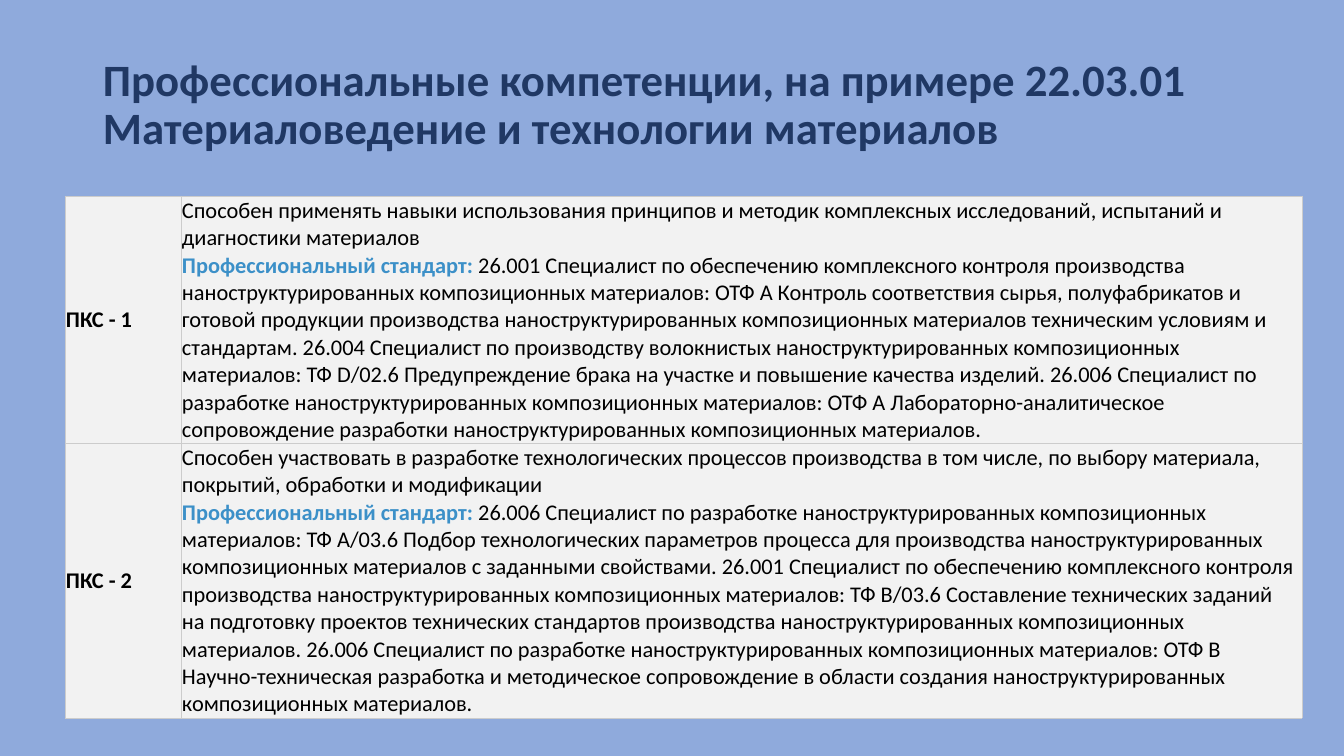
import pptx
import pptx.util
import pptx.dml.color
import pptx.enum.text
import pptx.oxml
import pptx.oxml.ns

EMU_PER_PX = 914400 / 100.8
FONT = "Calibri"
COLORS = {
    "background": "8FAADC",
    "title": "203864",
    "text": "000000",
    "standard": "3C90C8",
    "cell": "F2F2F2",
    "border": "CCCCCC",
}
TITLE = "Профессиональные компетенции, на примере 22.03.01  Материаловедение и технологии материалов"
STANDARD_LABEL = "Профессиональный стандарт: "
COMPETENCIES = [
    (
        "ПКС - 1",
        "Способен применять навыки использования принципов и методик комплексных исследований, "
        "испытаний и диагностики материалов",
        "26.001 Специалист по обеспечению комплексного контроля производства "
        "наноструктурированных композиционных материалов: ОТФ А Контроль соответствия сырья, "
        "полуфабрикатов и готовой продукции производства наноструктурированных композиционных "
        "материалов техническим условиям и стандартам. 26.004 Специалист по производству "
        "волокнистых наноструктурированных композиционных материалов: ТФ D/02.6 Предупреждение "
        "брака на участке и повышение качества изделий. 26.006 Специалист по разработке "
        "наноструктурированных композиционных материалов: ОТФ А Лабораторно-аналитическое "
        "сопровождение разработки наноструктурированных композиционных материалов.",
    ),
    (
        "ПКС - 2",
        "Способен участвовать в разработке технологических процессов производства в том числе, "
        "по выбору материала, покрытий, обработки и модификации",
        "26.006 Специалист по разработке наноструктурированных композиционных материалов: "
        "ТФ А/03.6 Подбор технологических параметров процесса для производства "
        "наноструктурированных композиционных материалов с заданными свойствами. 26.001 "
        "Специалист по обеспечению комплексного контроля производства наноструктурированных "
        "композиционных материалов: ТФ В/03.6 Составление технических заданий на подготовку "
        "проектов технических стандартов производства наноструктурированных композиционных "
        "материалов. 26.006 Специалист по разработке наноструктурированных композиционных "
        "материалов: ОТФ В Научно-техническая разработка и методическое сопровождение в области "
        "создания наноструктурированных композиционных материалов.",
    ),
]


def px(n):
    return pptx.util.Emu(round(n * EMU_PER_PX))


def rgb(name):
    return pptx.dml.color.RGBColor.from_string(COLORS[name])


def add_run(p, text, size, color, bold=False):
    r = p.add_run()
    r.text = text
    r.font.name = FONT
    r.font.size = pptx.util.Pt(size)
    r.font.bold = bold
    r.font.color.rgb = rgb(color)


def add_title(s, left, top, width, height):
    tf = s.shapes.add_textbox(px(left), px(top), px(width), px(height)).text_frame
    tf.word_wrap = True
    tf.vertical_anchor = pptx.enum.text.MSO_ANCHOR.MIDDLE
    p = tf.paragraphs[0]
    p.line_spacing = 0.9
    add_run(p, TITLE, 32, "title", True)


def style_cell(cell):
    cell.margin_left = cell.margin_right = cell.margin_top = cell.margin_bottom = px(1)
    cell.vertical_anchor = pptx.enum.text.MSO_ANCHOR.MIDDLE
    tc_pr = cell._tc.get_or_add_tcPr()
    for side in ("lnL", "lnR", "lnT", "lnB"):
        tc_pr.append(pptx.oxml.parse_xml(
            f'<a:{side} {pptx.oxml.ns.nsdecls("a")} w="{pptx.util.Pt(0.75)}">'
            f'<a:solidFill><a:srgbClr val="{COLORS["border"]}"/></a:solidFill></a:{side}>'
        ))
    cell.fill.solid()
    cell.fill.fore_color.rgb = rgb("cell")


def add_competency_table(s, left, top, col_widths, row_heights):
    table = s.shapes.add_table(
        len(row_heights), len(col_widths), px(left), px(top),
        px(sum(col_widths)), px(sum(row_heights)),
    ).table
    table.first_row = False
    table.horz_banding = False
    for column, width in zip(table.columns, col_widths):
        column.width = px(width)
    for row, height, (code, ability, standard) in zip(table.rows, row_heights, COMPETENCIES):
        row.height = px(height)
        code_cell, text_cell = row.cells
        style_cell(code_cell)
        style_cell(text_cell)
        add_run(code_cell.text_frame.paragraphs[0], code, 16, "text", True)
        tf = text_cell.text_frame
        add_run(tf.paragraphs[0], ability, 16, "text")
        p = tf.add_paragraph()
        add_run(p, STANDARD_LABEL, 16, "standard", True)
        add_run(p, standard, 16, "text")


def main():
    prs = pptx.Presentation()
    prs.slide_width = px(1344)
    prs.slide_height = px(756)
    s = prs.slides.add_slide(prs.slide_layouts[6])
    s.background.fill.solid()
    s.background.fill.fore_color.rgb = rgb("background")
    add_title(s, 93, 33, 1159, 146)
    add_competency_table(s, 65, 196, [116, 1121], [247, 275])
    prs.save("out.pptx")


if __name__ == "__main__":
    main()
